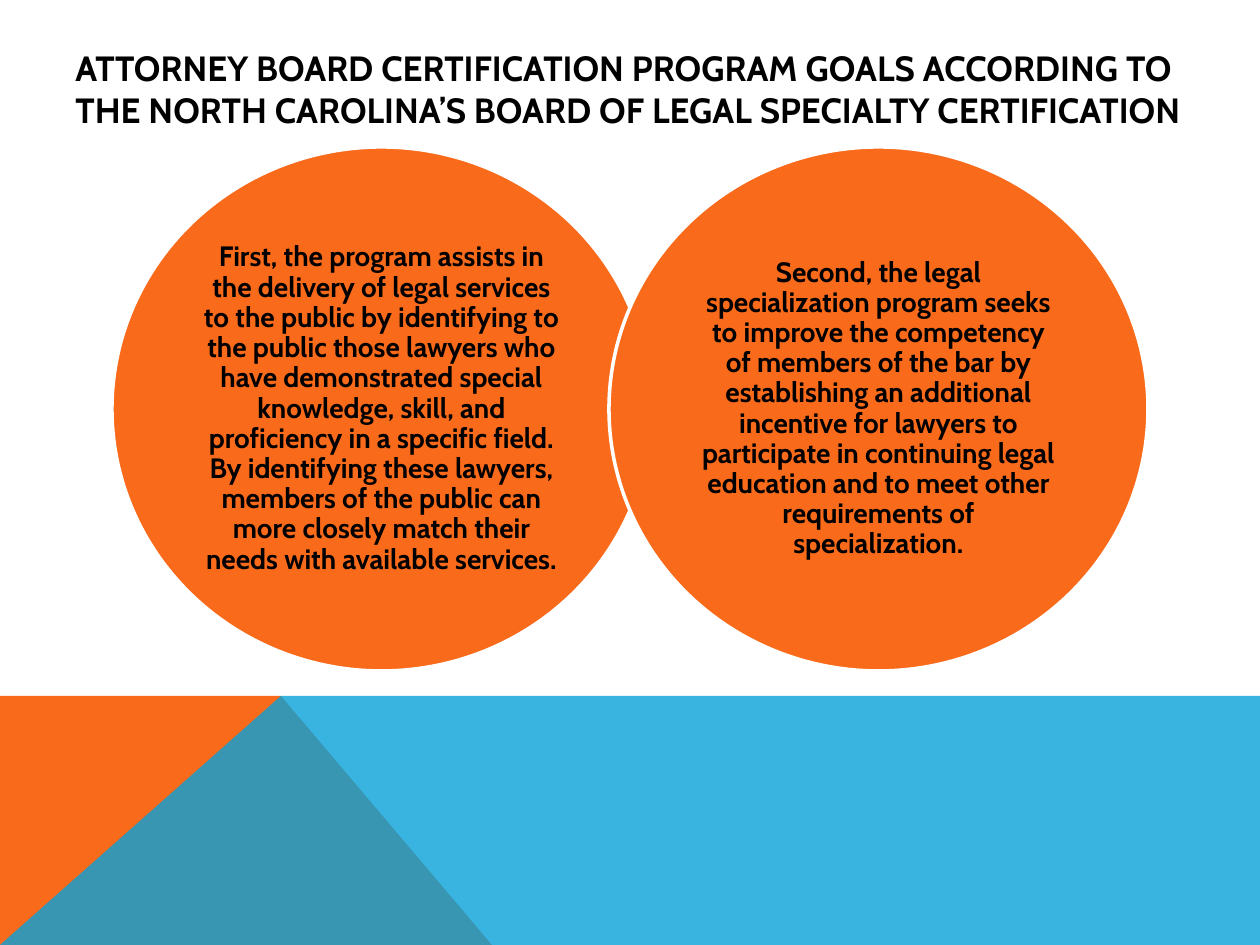
from collections import namedtuple
from dataclasses import dataclass

from lxml import etree
from pptx import Presentation
from pptx import util as u
from pptx.dml.color import RGBColor
from pptx.enum import shapes, text
from pptx.oxml.ns import qn

SCALE = 914400 / 126
Box = namedtuple("Box", "left top width height")


@dataclass(frozen=True)
class Theme:
    font: str = "Cabin"
    ink: RGBColor = RGBColor(0x00, 0x00, 0x00)
    paper: RGBColor = RGBColor(0xFF, 0xFF, 0xFF)
    orange: RGBColor = RGBColor(0xF9, 0x6A, 0x1B)
    blue: RGBColor = RGBColor(0x08, 0xA1, 0xD9)
    blue_opacity: int = 80
    title_size: int = 20
    goal_size: int = 16
    outline: int = 2


THEME = Theme()

TITLE = (
    "ATTORNEY BOARD CERTIFICATION PROGRAM GOALS ACCORDING TO "
    "THE NORTH CAROLINA’S BOARD OF LEGAL SPECIALTY CERTIFICATION"
)
GOALS = [
    "First, the program assists in the delivery of legal services to the public "
    "by identifying to the public those lawyers who have demonstrated special "
    "knowledge, skill, and proficiency in a specific field. By identifying these "
    "lawyers, members of the public can more closely match their needs with "
    "available services.",
    "Second, the legal specialization program seeks to improve the competency of "
    "members of the bar by establishing an additional incentive for lawyers to "
    "participate in continuing legal education and to meet other requirements of "
    "specialization.",
]


def px(length):
    return u.Emu(round(length * SCALE))


def place(box):
    return [px(length) for length in box]


def write(frame, words, size, align):
    frame.word_wrap = True
    frame.vertical_anchor = text.MSO_ANCHOR.MIDDLE
    para = frame.paragraphs[0]
    para.text = words
    para.alignment = align
    para.font.name = THEME.font
    para.font.size = u.Pt(size)
    para.font.bold = True
    para.font.color.rgb = THEME.ink
    return para


def add_polygon(page, box, points, color):
    builder = page.shapes.build_freeform(*points[0], scale=SCALE)
    builder.add_line_segments(points[1:], close=True)
    polygon = builder.convert_to_shape(px(box.left), px(box.top))
    polygon.shadow.inherit = False
    polygon.fill.solid()
    polygon.fill.fore_color.rgb = color
    polygon.line.fill.background()
    return polygon


def add_band(page, box):
    peak, foot = 281, 492
    right, bottom = box.width, box.height
    add_polygon(page, box, [(0, 0), (peak, 0), (foot, bottom), (0, bottom)],
                THEME.orange)
    overlay = add_polygon(
        page, box, [(0, bottom), (peak, 0), (right, 0), (right, bottom)], THEME.blue)
    tint = overlay.fill._xPr.find(".//" + qn("a:srgbClr"))
    etree.SubElement(tint, qn("a:alpha"), val=str(THEME.blue_opacity * 1000))


def add_title(page, box):
    title = page.shapes.add_textbox(*place(box))
    write(title.text_frame, TITLE, THEME.title_size, text.PP_ALIGN.LEFT)


def add_goal(page, box, words):
    circle = page.shapes.add_shape(shapes.MSO_SHAPE.OVAL, *place(box))
    circle.shadow.inherit = False
    circle.fill.solid()
    circle.fill.fore_color.rgb = THEME.orange
    circle.line.color.rgb = THEME.paper
    circle.line.width = u.Pt(THEME.outline)
    frame = circle.text_frame
    frame.margin_left = frame.margin_right = px(9)
    frame.margin_top = frame.margin_bottom = px(9)
    para = write(frame, words, THEME.goal_size, text.PP_ALIGN.CENTER)
    para.line_spacing = 0.9


def add_goals(page, box):
    width, step = 539, box.width - 539
    for index, words in enumerate(GOALS):
        left = box.left + index * step
        add_goal(page, Box(left, box.top, width, box.height), words)


def main():
    deck = Presentation()
    deck.slide_width, deck.slide_height = px(1260), px(945)
    page = deck.slides.add_slide(deck.slide_layouts[6])
    page.background.fill.solid()
    page.background.fill.fore_color.rgb = THEME.paper
    add_band(page, Box(0, 696, 1260, 249))
    add_title(page, Box(63, 51, 1134, 76))
    add_goals(page, Box(112, 147, 1036, 524))
    deck.save("out.pptx")


if __name__ == "__main__":
    main()
